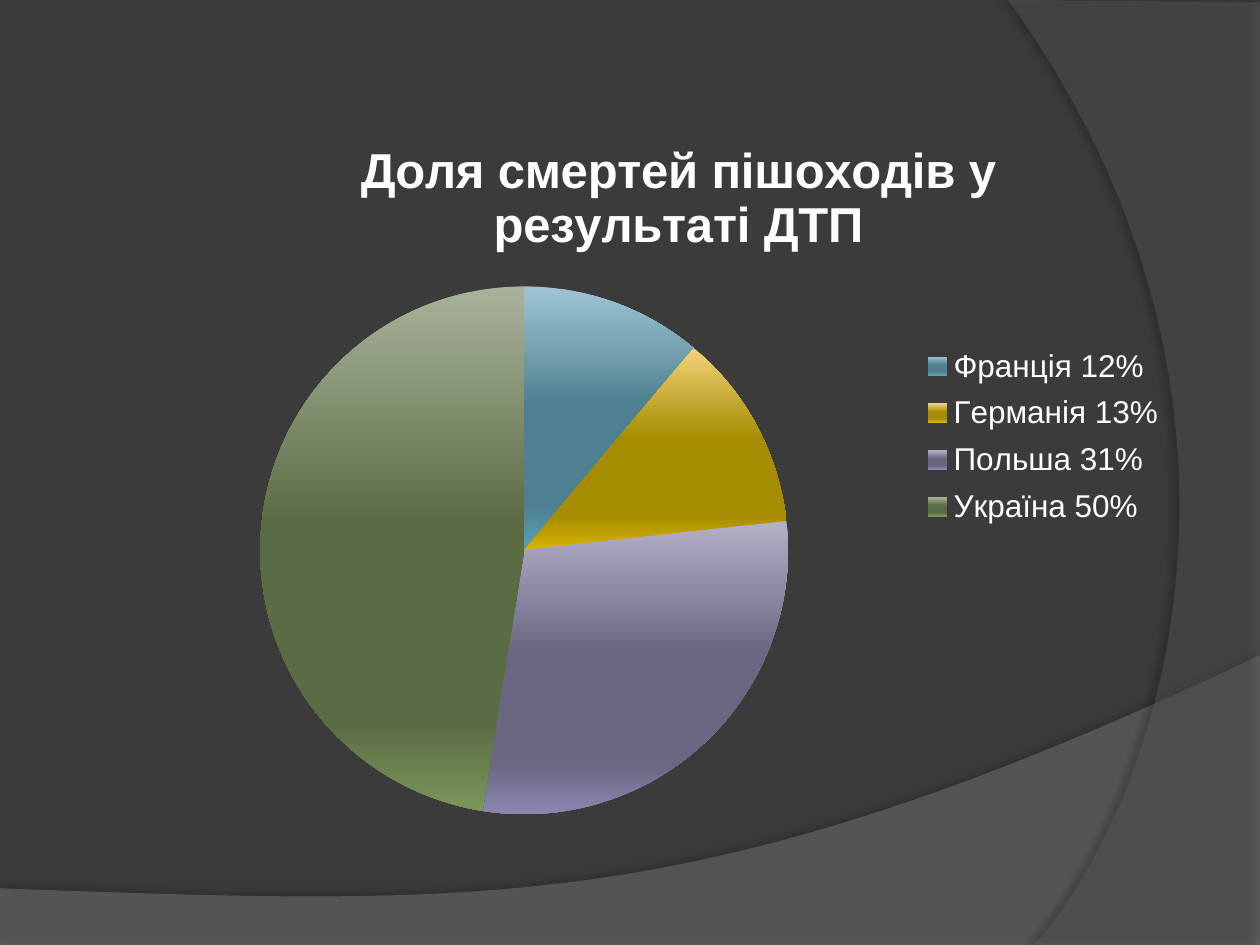
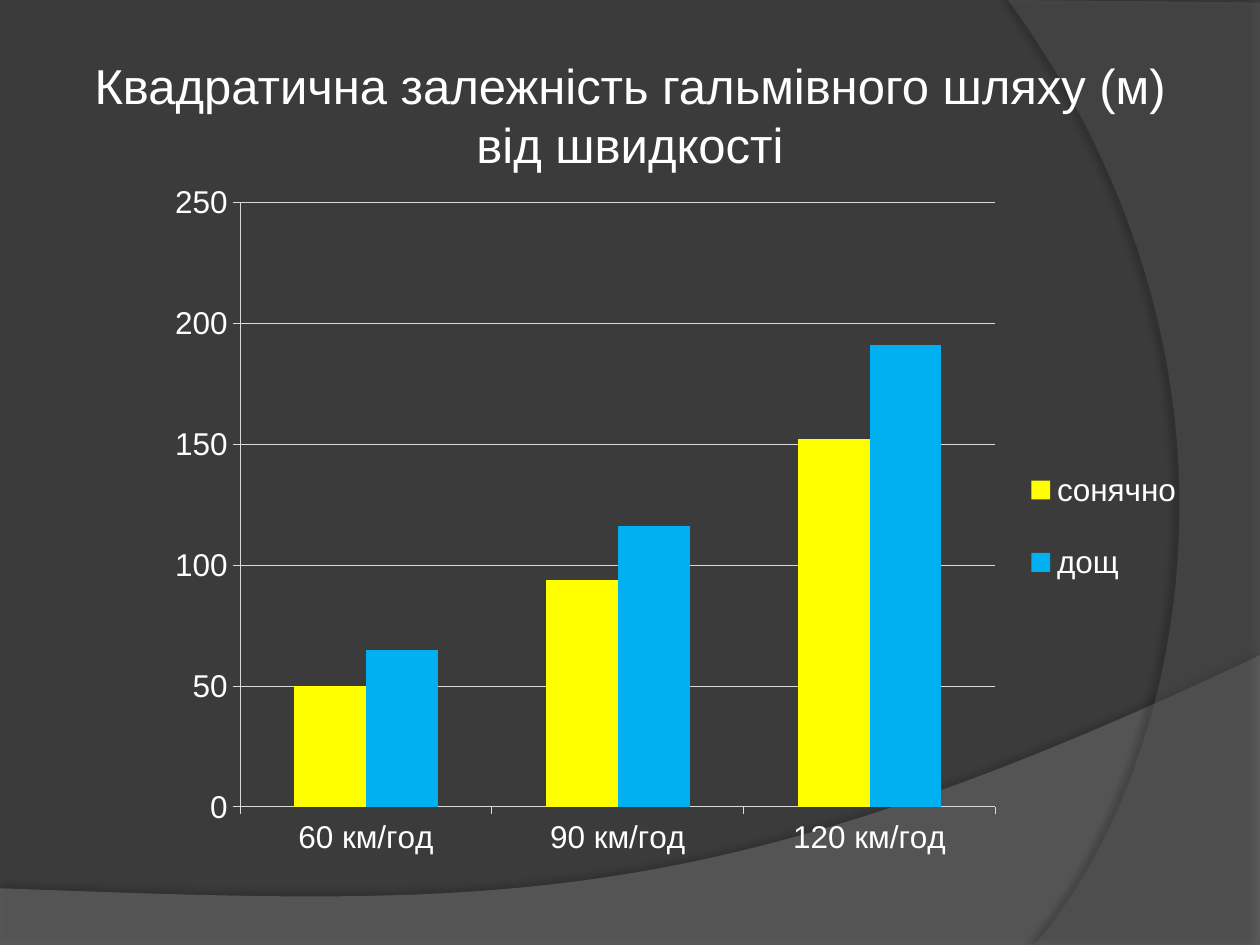
from dataclasses import dataclass

from pptx import Presentation
from pptx.chart.data import CategoryChartData as Data
from pptx.dml.color import RGBColor as RGB
from pptx.enum.chart import XL_CHART_TYPE as Kind
from pptx.enum.chart import XL_LEGEND_POSITION as Side
from pptx.enum.chart import XL_TICK_MARK as Tick
from pptx.enum.text import MSO_ANCHOR, MSO_AUTO_SIZE, PP_ALIGN
from pptx.oxml import parse_xml
from pptx.oxml.ns import nsdecls, qn
from pptx.util import Pt


@dataclass(frozen=True)
class Theme:
    font: str = "Arial"
    head: int = 28
    body: int = 18
    back: str = "3B3B3B"
    text: str = "FFFFFF"
    grid: str = "D9D9D9"
    floor: str = "7F7F7F"
    edge: str = "5E5E5E"
    sun: str = "FFFF00"
    rain: str = "00B0F0"
    # top, middle and bottom shade of each pie slice
    pie: tuple = (
        ("9FC5D5", "4F808F", "58A2BC"),
        ("F3D27A", "A68C00", "D9B400"),
        ("B5B0C8", "6B6783", "8D85B0"),
        ("A9B39B", "5B6C45", "7A965A"),
    )


THEME = Theme()
WIDE, HIGH = 720, 540


def paint(fill, color):
    fill.solid()
    fill.fore_color.rgb = RGB.from_string(color)


def style(font, size, bold=False):
    font.name, font.size, font.bold = THEME.font, Pt(size), bold
    font.color.rgb = RGB.from_string(THEME.text)


def bend_last(shape, pulls):
    """Turn the last straight side into a curve with two control points."""
    line = shape.element.findall(".//" + qn("a:lnTo"))[-1]
    spots = "".join(f'<a:pt x="{Pt(x) - shape.left}" y="{Pt(y) - shape.top}"/>'
                    for x, y in pulls)
    arc = parse_xml(f'<a:cubicBezTo {nsdecls("a")}>{spots}</a:cubicBezTo>')
    arc.append(line.find(qn("a:pt")))
    line.getparent().replace(line, arc)


def add_band(slide, master, place, points, pulls, color, alpha, shade):
    """Draw a see-through band with one curved side and move it to the master."""
    (x, y), *rest = [(Pt(p), Pt(q)) for p, q in points]
    pen = slide.shapes.build_freeform(x, y)
    pen.add_line_segments(rest, close=True)
    band = pen.convert_to_shape()
    bend_last(band, pulls)
    paint(band.fill, color)
    band.line.fill.background()
    tone = band.element.spPr.find(".//" + qn("a:srgbClr"))
    tone.append(parse_xml(
        f'<a:alpha {nsdecls("a")} val="{alpha * 1000}"/>'))
    dark, far, angle = shade
    band.element.spPr.append(parse_xml(
        f'<a:effectLst {nsdecls("a")}><a:outerShdw blurRad="{Pt(4)}" '
        f'dist="{Pt(far)}" dir="{angle * 60000}" algn="ctr" rotWithShape="0">'
        f'<a:srgbClr val="000000"><a:alpha val="{dark * 1000}"/></a:srgbClr>'
        '</a:outerShdw></a:effectLst>'))
    master.shapes.element.insert(place, band.element)


def set_master(slide, master):
    paint(master.background.fill, THEME.back)
    add_band(slide, master, 2,
             [(0, 507.6), (0, 540.7), (WIDE, 540.7), (WIDE, 374.4), (0, 507.6)],
             [(402.5, 524.9), (281.5, 517.7)],
             THEME.floor, 45, (35, 3.5, 270))
    add_band(slide, master, 3,
             [(WIDE, 1.4), (WIDE, HIGH), (591.1, HIGH), (576, 0)],
             [(673.2, 445.7), (733, 216)],
             THEME.edge, 40, (45, 4, 180))


def set_place(node, *spot, inner=False):
    """Fix a chart part at x, y, w, h, in percent of the chart."""
    parts = '<c:layoutTarget val="inner"/>' if inner else ""
    parts += '<c:xMode val="edge"/><c:yMode val="edge"/>'
    parts += "".join(f'<c:{tag} val="{val / 100:.4f}"/>'
                     for tag, val in zip("xywh", spot))
    new = parse_xml(f'<c:layout {nsdecls("c")}><c:manualLayout>{parts}'
                    '</c:manualLayout></c:layout>')
    old = node.find(qn("c:layout"))
    if old is not None:
        node.remove(old)
    node.insert(0 if inner else 1, new)


def add_graph(slide, kind, box, names, rows, area, key):
    data = Data()
    data.categories = names
    for name, vals in rows:
        data.add_series(name, vals)
    chart = slide.shapes.add_chart(kind, *map(Pt, box), data).chart
    style(chart.font, THEME.body)
    chart.has_legend = True
    chart.legend.position = Side.RIGHT
    chart.legend.include_in_layout = False
    set_place(chart.element.find(".//" + qn("c:plotArea")), *area, inner=True)
    set_place(chart.element.find(".//" + qn("c:legend")), *key)
    return chart


def blend(shades):
    """Give a gradient that runs from top to bottom."""
    top, mid, low = shades
    stops = "".join(
        f'<a:gs pos="{pos * 1000}"><a:srgbClr val="{color}"/></a:gs>'
        for pos, color in ((0, top), (45, mid), (83, mid), (100, low)))
    return parse_xml(
        f'<a:gradFill {nsdecls("a")} rotWithShape="1"><a:gsLst>{stops}'
        '</a:gsLst><a:lin ang="5400000" scaled="0"/></a:gradFill>')


def add_pie(slide, box):
    names = ["Франція 12%", "Германія 13%", "Польша 31%", "Україна 50%"]
    chart = add_graph(slide, Kind.PIE, box, names,
                      [("Series 1", (11, 12, 29, 47))],
                      (12.5, 22.4, 50.1, 75.1), (75, 29.6, 23.6, 28.3))
    chart.has_title = True
    para = chart.chart_title.text_frame.paragraphs[0]
    para.text = "Доля смертей пішоходів у результаті ДТП"
    style(para.runs[0].font, THEME.head, bold=True)
    set_place(chart.element.find(".//" + qn("c:title")), 21.2, 0.3)
    plot = chart.plots[0]
    plot.vary_by_categories = True
    for n in range(len(names)):
        form = plot.series[0].points[n].format
        form.line.fill.background()
        form.fill.gradient()
    fills = chart.element.findall(".//" + qn("a:gradFill"))
    for fill, shades in zip(fills, THEME.pie):
        fill.getparent().replace(fill, blend(shades))


def add_bars(slide, box):
    chart = add_graph(slide, Kind.COLUMN_CLUSTERED, box,
                      ["60 км/год", "90 км/год", "120 км/год"],
                      [("сонячно", (50, 94, 152)), ("дощ", (65, 116, 191))],
                      (10.3, 4.7, 69.8, 82.5), (82.6, 36.5, 15, 24.8))
    chart.has_title = False
    plot = chart.plots[0]
    plot.vary_by_categories = False
    plot.gap_width, plot.overlap = 150, 0
    for row, color in zip(plot.series, (THEME.sun, THEME.rain)):
        paint(row.format.fill, color)
    scale, base = chart.value_axis, chart.category_axis
    scale.minimum_scale, scale.maximum_scale, scale.major_unit = 0, 250, 50
    scale.has_major_gridlines = True
    for axis in (scale, base):
        axis.major_tick_mark = Tick.OUTSIDE
    for part in (scale, base, scale.major_gridlines):
        part.format.line.width = Pt(0.5)
        paint(part.format.line.fill, THEME.grid)


def add_title(slide, box, text):
    title = slide.shapes.title
    title.left, title.top, title.width, title.height = map(Pt, box)
    frame = title.text_frame
    frame.word_wrap = True
    frame.auto_size = MSO_AUTO_SIZE.NONE
    frame.vertical_anchor = MSO_ANCHOR.MIDDLE
    frame.text = text
    para = frame.paragraphs[0]
    para.alignment = PP_ALIGN.CENTER
    style(para.runs[0].font, THEME.head)


def main():
    prs = Presentation()
    prs.slide_width, prs.slide_height = Pt(WIDE), Pt(HIGH)
    deaths = prs.slides.add_slide(prs.slide_layouts[6])
    set_master(deaths, prs.slide_master)
    add_pie(deaths, (73.5, 73.5, 602, 402))
    speed = prs.slides.add_slide(prs.slide_layouts[5])
    add_bars(speed, (73.5, 95.8, 618.5, 419))
    add_title(speed, (28, 28, 664, 75),
              "Квадратична залежність гальмівного шляху (м) від швидкості")
    prs.save("out.pptx")


if __name__ == "__main__":
    main()
